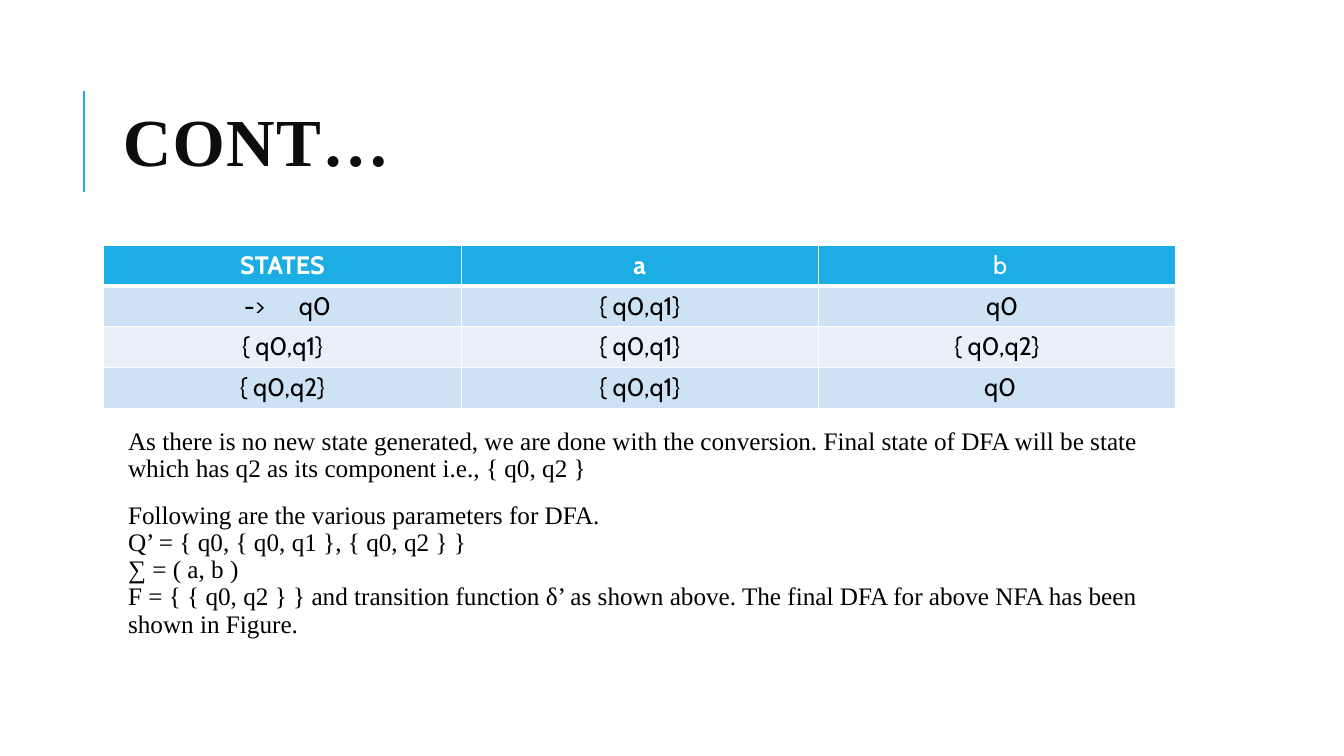
from dataclasses import dataclass

import lxml.etree
import pptx
import pptx.dml.color
import pptx.enum.shapes
import pptx.enum.text
import pptx.oxml.ns
import pptx.util

Inches = pptx.util.Inches
Pt = pptx.util.Pt
RGBColor = pptx.dml.color.RGBColor
qn = pptx.oxml.ns.qn

BLUE = RGBColor(0x1C, 0xAD, 0xE4)
PALE = RGBColor(0xCD, 0xE3, 0xF5)
FAINT = RGBColor(0xE8, 0xF1, 0xFA)
WHITE = RGBColor(0xFF, 0xFF, 0xFF)
BLACK = RGBColor(0, 0, 0)
INK = RGBColor(0x0D, 0x0D, 0x0D)
SERIF = "Times New Roman"
SANS = "Cabin"


@dataclass
class Entry:
    text: str
    nudge: float = 0
    bold: bool = False


@dataclass
class Band:
    fill: RGBColor
    ink: RGBColor
    cells: list[Entry]


@dataclass
class Block:
    left: float
    top: float
    width: float
    height: float
    inset: float
    size: int
    ink: RGBColor
    bold: bool
    ratio: float
    lines: list[str]


BANDS = [
    Band(BLUE, WHITE, [Entry("STATES", bold=True), Entry("a", bold=True), Entry("b", 0.06)]),
    Band(PALE, BLACK, [Entry("-> q0", 0.1), Entry("{ q0,q1}"), Entry("q0", 0.1)]),
    Band(FAINT, BLACK, [Entry("{ q0,q1}"), Entry("{ q0,q1}"), Entry("{ q0,q2}")]),
    Band(PALE, BLACK, [Entry("{ q0,q2}"), Entry("{ q0,q1}"), Entry("q0", 0.06)]),
]

TITLE = Block(1.12, 0.64, 10.63, 1.64, 0.1, 48, INK, True, 0.8, ["CONT…"])
BODY = Block(1.22, 4.2, 10.47, 2.7, 0.05, 18, BLACK, False, 0.9, [
    "As there is no new state generated, we are done with the conversion. "
    "Final state of DFA will be state which has q2 as its component i.e., { q0, q2 }",
    "Following are the various parameters for DFA.\v"
    "Q’ = { q0, { q0, q1 }, { q0, q2 } }\v"
    "∑ = ( a, b )\v"
    "F = { { q0, q2 } } and transition function δ’ as shown above. "
    "The final DFA for above NFA has been shown in Figure.",
])


def style(run, face: str, size: int, ink: RGBColor, bold: bool) -> None:
    run.font.name = face
    run.font.size = Pt(size)
    run.font.color.rgb = ink
    run.font.bold = bold


def track(run, points: float) -> None:
    run.font._element.set("spc", str(int(points * 100)))


def add_block(slide, block: Block):
    box = slide.shapes.add_textbox(
        Inches(block.left), Inches(block.top), Inches(block.width), Inches(block.height))
    frame = box.text_frame
    frame.word_wrap = True
    frame.margin_left = frame.margin_right = Inches(block.inset)
    frame.margin_top = frame.margin_bottom = Inches(0.05)
    frame.text = "\n".join(block.lines)
    for index, para in enumerate(frame.paragraphs):
        para.line_spacing = block.ratio
        para.space_before = Pt(12 if index else 0)
        para.space_after = Pt(2)
        for run in para.runs:
            style(run, SERIF, block.size, block.ink, block.bold)
    return frame


def add_edge(cell, side: str, width: float) -> None:
    edge = lxml.etree.SubElement(
        cell._tc.get_or_add_tcPr(), qn(f"a:ln{side}"), w=str(int(Pt(width))))
    fill = lxml.etree.SubElement(edge, qn("a:solidFill"))
    lxml.etree.SubElement(fill, qn("a:srgbClr"), val=str(WHITE))


def fill_cell(cell, entry: Entry, band: Band, top: int, base: int) -> None:
    for side, width in (("L", 1), ("R", 1), ("T", top), ("B", base)):
        add_edge(cell, side, width)
    cell.fill.solid()
    cell.fill.fore_color.rgb = band.fill
    cell.margin_left = Inches(0.1 + entry.nudge)
    para = cell.text_frame.paragraphs[0]
    para.alignment = pptx.enum.text.PP_ALIGN.CENTER
    head, gap, tail = entry.text.partition("-> ")
    if gap:
        para.text = "->"
        for part in (" ", tail):
            para.add_run().text = part
        track(para.runs[1], 20)
    else:
        para.text = head
    for run in para.runs:
        style(run, SANS, 18, band.ink, entry.bold)


def add_states(slide) -> None:
    table = slide.shapes.add_table(
        len(BANDS), 3, Inches(1.03), Inches(2.43), Inches(10.63), Inches(1.62)).table
    for row, band in enumerate(BANDS):
        for col, entry in enumerate(band.cells):
            fill_cell(table.cell(row, col), entry, band,
                      3 if row == 1 else 1, 3 if row == 0 else 1)


def add_rule(slide) -> None:
    rule = slide.shapes.add_connector(
        pptx.enum.shapes.MSO_CONNECTOR.STRAIGHT,
        Inches(0.83), Inches(1.9), Inches(0.83), Inches(0.9))
    rule.line.color.rgb = BLUE
    rule.line.width = Pt(1.5)
    lxml.etree.SubElement(rule._element.spPr, qn("a:effectLst"))


def main() -> None:
    deck = pptx.Presentation()
    deck.slide_width = Inches(13.33)
    deck.slide_height = Inches(7.5)
    slide = deck.slides.add_slide(deck.slide_layouts[6])
    add_rule(slide)
    title = add_block(slide, TITLE)
    title.vertical_anchor = pptx.enum.text.MSO_ANCHOR.MIDDLE
    track(title.paragraphs[0].runs[0], 1)
    add_block(slide, BODY)
    add_states(slide)
    deck.save("out.pptx")


if __name__ == "__main__":
    main()
